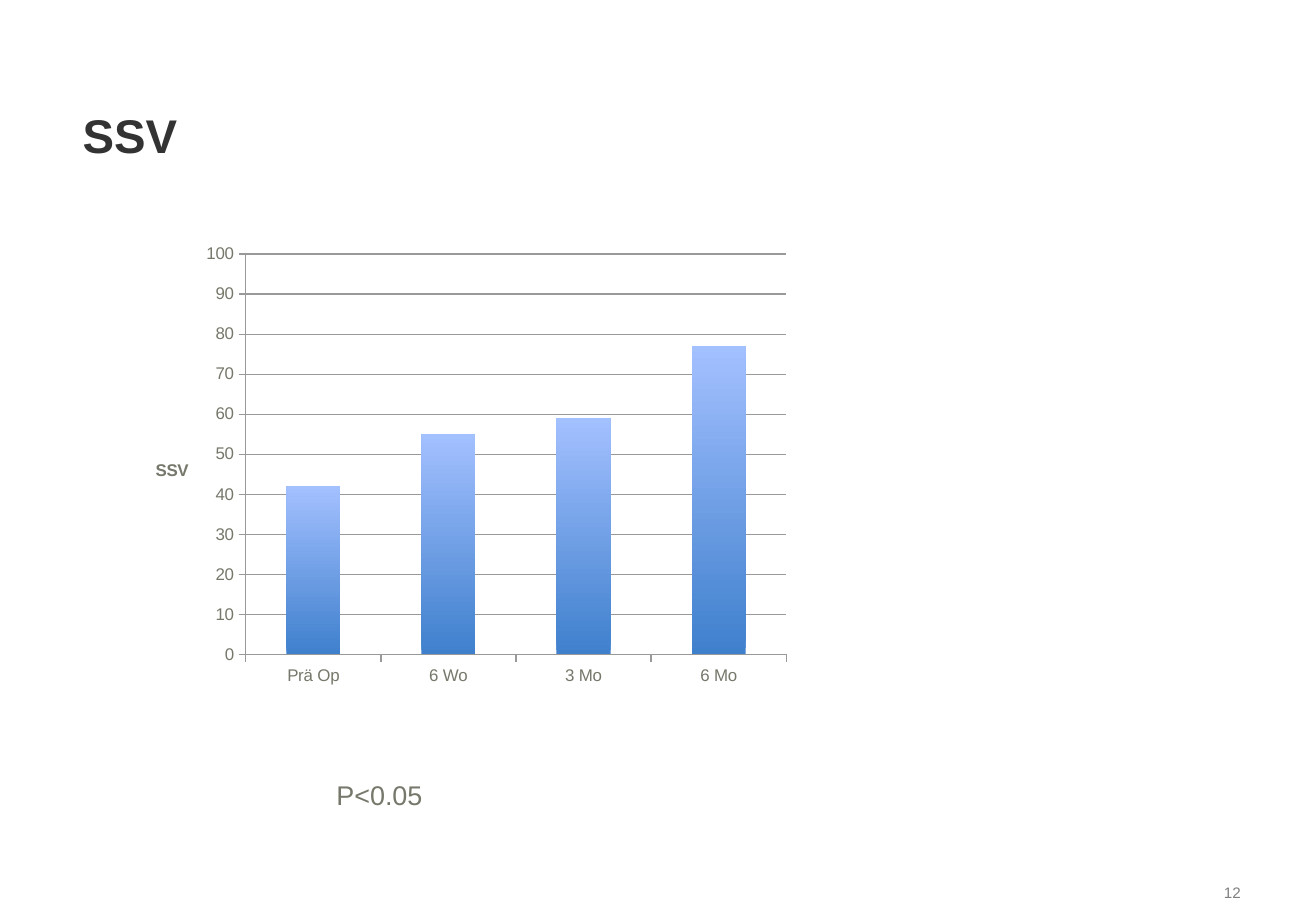
from pptx import Presentation
from pptx.chart.data import CategoryChartData
from pptx.dml.color import RGBColor
from pptx.enum.chart import XL_CHART_TYPE as ChartType, XL_TICK_MARK as Tick
from pptx.enum.text import MSO_ANCHOR as Anchor, MSO_AUTO_SIZE as AutoSize, PP_ALIGN as Align
from pptx.oxml import parse_xml
from pptx.oxml.ns import nsdecls, qn
from pptx.util import Inches, Pt

COLORS = {
    "title": "333333",
    "text": "75786A",
    "number": "808080",
    "line": "999999",
    "bar_bottom": "3F80CD",
    "bar_top": "A3C0FF",
}


class SlideBuilder:
    """Holds the style and the current slide."""

    font_name = "Arial"

    def __init__(self, deck):
        self.slide = deck.slides.add_slide(deck.slide_layouts[5])

    def style(self, font, size, color, bold=False):
        font.name = self.font_name
        font.size = Pt(size)
        font.bold = bold
        font.color.rgb = RGBColor.from_string(COLORS[color])

    def place(self, shape, left, top, width, height):
        shape.left, shape.top = Inches(left), Inches(top)
        shape.width, shape.height = Inches(width), Inches(height)

    def title(self, text, *bounds):
        box = self.slide.shapes.title
        self.place(box, *bounds)
        frame = box.text_frame
        frame.text = text
        frame.vertical_anchor = Anchor.MIDDLE
        para = frame.paragraphs[0]
        para.alignment = Align.LEFT
        self.style(para.runs[0].font, 28, "title", bold=True)

    def text(self, text, bounds, size, color, align=Align.LEFT, wrap=True):
        box = self.slide.shapes.add_textbox(*map(Inches, bounds))
        frame = box.text_frame
        frame.word_wrap = wrap
        if not wrap:
            frame.auto_size = AutoSize.SHAPE_TO_FIT_TEXT
        frame.text = text
        para = frame.paragraphs[0]
        para.alignment = align
        self.style(para.runs[0].font, size, color)

    def set_layout(self, parent, **settings):
        """Give a chart part a fixed place, in fractions of the chart."""
        layout = parent.find(qn("c:layout"))
        if layout is None:
            layout = parse_xml(f"<c:layout {nsdecls('c')}/>")
            parent.insert(0, layout)
        items = "".join(f'<c:{key} val="{value}"/>' for key, value in settings.items())
        layout.append(parse_xml(f"<c:manualLayout {nsdecls('c')}>{items}</c:manualLayout>"))

    def column_chart(self, categories, values, axis_label, bounds):
        data = CategoryChartData()
        data.categories = categories
        data.add_series("Series 1", values)
        chart = self.slide.shapes.add_chart(
            ChartType.COLUMN_CLUSTERED, *map(Inches, bounds), data).chart
        chart.has_legend = False
        chart.has_title = False
        self.style(chart.font, 10, "text")

        # Columns
        plot = chart.plots[0]
        plot.vary_by_categories = False
        plot.gap_width = 150
        fill = plot.series[0].format.fill
        fill.gradient()
        fill.gradient_angle = 90
        for stop, color in zip(fill.gradient_stops, ("bar_bottom", "bar_top")):
            stop.color.rgb = RGBColor.from_string(COLORS[color])

        # Axes and gridlines
        value_axis = chart.value_axis
        value_axis.minimum_scale, value_axis.maximum_scale = 0, 100
        value_axis.major_unit = 10
        value_axis.has_major_gridlines = True
        for axis in (chart.category_axis, value_axis):
            axis.major_tick_mark = Tick.OUTSIDE
            axis.minor_tick_mark = Tick.NONE
        for part in (chart.category_axis, value_axis, value_axis.major_gridlines):
            part.format.line.color.rgb = RGBColor.from_string(COLORS["line"])
            part.format.line.width = Pt(0.75)

        # Horizontal axis title
        label = value_axis.axis_title
        label.text_frame.text = axis_label
        self.style(label.text_frame.paragraphs[0].runs[0].font, 10, "text", bold=True)
        body = label._element.xpath(".//a:bodyPr")[0]
        body.set("rot", "0")
        body.set("vert", "horz")
        self.set_layout(label._element, xMode="edge", yMode="edge", x=0.03, y=0.48)
        self.set_layout(chart._chartSpace.chart.plotArea, layoutTarget="inner",
                        xMode="edge", yMode="edge", x=0.17, y=0.04, w=0.81, h=0.87)


def main():
    deck = Presentation()
    deck.slide_width, deck.slide_height = Inches(10.83), Inches(7.5)
    page = SlideBuilder(deck)

    page.title("SSV", 0.58, 0.75, 6.42, 0.71)
    page.text("12", (8.41, 7.22, 1.9, 0.52), 9, "number", align=Align.RIGHT)
    page.column_chart(("Prä Op", "6 Wo", "3 Mo", "6 Mo"), (42, 55, 59, 77),
                      "SSV", (1.09, 1.94, 5.49, 3.79))
    page.text("P<0.05", (2.67, 6.36, 0.92, 0.37), 16, "text", wrap=False)

    deck.save("out.pptx")


if __name__ == "__main__":
    main()
